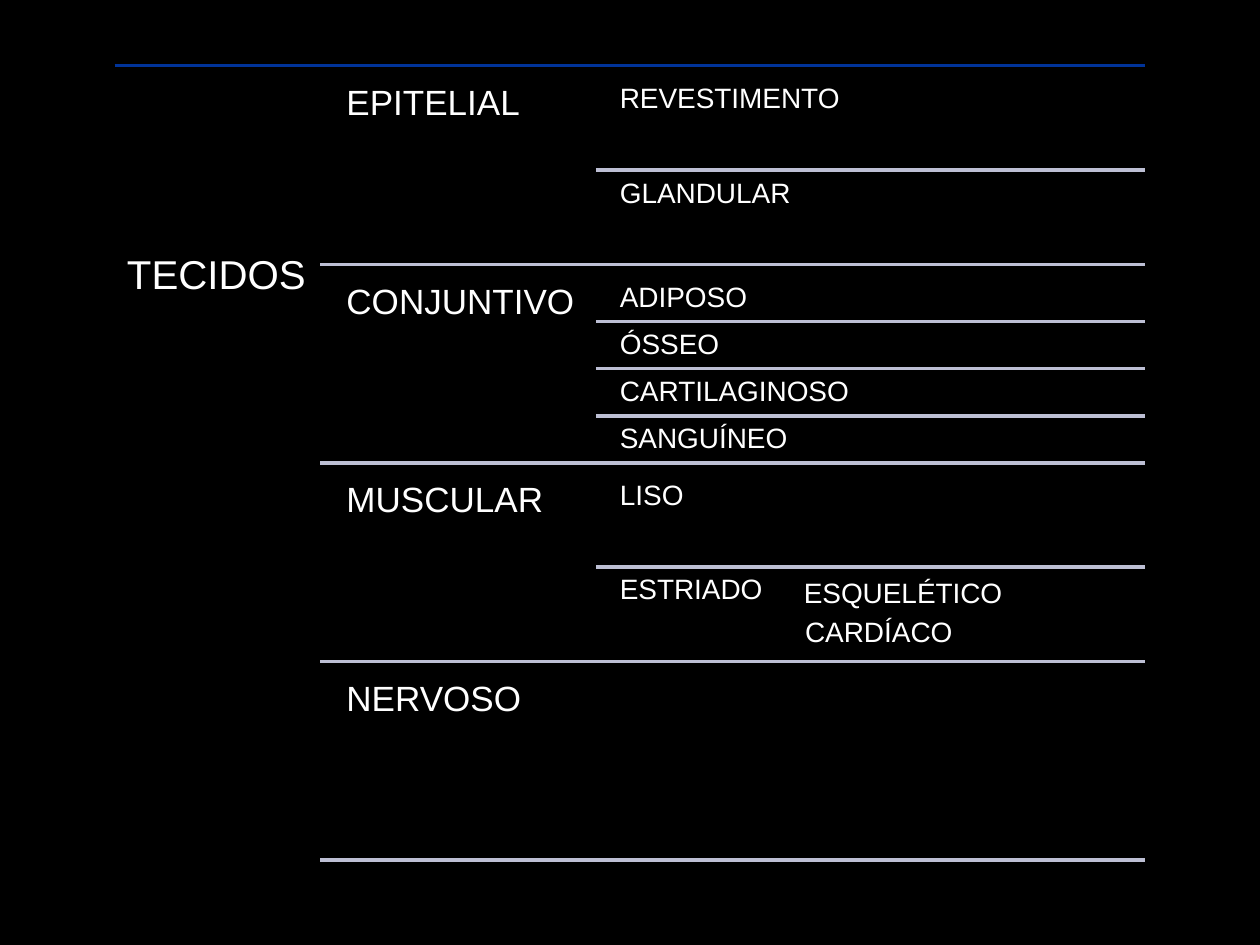
from dataclasses import dataclass

from pptx import Presentation
from pptx.dml.color import RGBColor
from pptx.enum.shapes import MSO_CONNECTOR as Connector
from pptx.enum.text import MSO_ANCHOR as Anchor, PP_ALIGN as Align
from pptx.oxml.xmlchemy import OxmlElement
from pptx.slide import Slide
from pptx.util import Inches, Pt


@dataclass(frozen=True)
class Theme:
    background: str = "000000"
    text: str = "FFFFFF"
    top_rule: str = "003399"
    rule: str = "BDBFD4"
    font: str = "Arial"
    root_size: int = 23
    tissue_size: int = 20
    subtype_size: int = 16
    rule_width: int = 2


@dataclass(frozen=True)
class Tissue:
    name: str
    subtypes: tuple[str, ...] = ()


THEME = Theme()

TISSUES = (
    Tissue("EPITELIAL", ("REVESTIMENTO", "GLANDULAR")),
    Tissue("CONJUNTIVO", ("ADIPOSO", "ÓSSEO", "CARTILAGINOSO", "SANGUÍNEO")),
    Tissue("MUSCULAR", ("LISO", "ESTRIADO")),
    Tissue("NERVOSO"),
)

# Layout in inches
LEFT, RIGHT, TOP = 0.91, 9.09, 0.52
TISSUE_RULE_LEFT, TISSUE_LEFT = 2.54, 2.67
SUBTYPE_RULE_LEFT, SUBTYPE_LEFT = 4.73, 4.85
COLUMN_WIDTH = 2.06
FIRST_TISSUE_TOP = 0.6
TISSUE_HEIGHT, TISSUE_GAP = 1.5, 0.075


def add_text(slide: Slide, text: str, *, left: float, top: float, width: float = COLUMN_WIDTH,
             height: float, size: int, inset: float) -> None:
    shape = slide.shapes.add_textbox(Inches(left), Inches(top), Inches(width), Inches(height))
    frame = shape.text_frame
    frame.word_wrap = True
    frame.vertical_anchor = Anchor.TOP
    frame.margin_left = frame.margin_right = Inches(inset)
    frame.margin_top = frame.margin_bottom = Inches(inset)
    paragraph = frame.paragraphs[0]
    paragraph.alignment = Align.LEFT
    paragraph.line_spacing = 0.9
    run = paragraph.add_run()
    run.text = text
    run.font.name = THEME.font
    run.font.size = Pt(size)
    run.font.color.rgb = RGBColor.from_string(THEME.text)


def add_rule(slide: Slide, left: float, y: float, color: str = THEME.rule) -> None:
    connector = slide.shapes.add_connector(
        Connector.STRAIGHT, Inches(left), Inches(y), Inches(RIGHT), Inches(y))
    connector.line.color.rgb = RGBColor.from_string(color)
    connector.line.width = Pt(THEME.rule_width)
    connector._element.spPr.append(OxmlElement("a:effectLst"))


def add_subtype(slide: Slide, text: str, left: float, top: float, height: float) -> None:
    add_text(slide, text, left=left, top=top, height=height,
             size=THEME.subtype_size, inset=0.07)


def add_tissue(slide: Slide, tissue: Tissue, top: float) -> None:
    add_text(slide, tissue.name, left=TISSUE_LEFT, top=top, height=TISSUE_HEIGHT,
             size=THEME.tissue_size, inset=0.08)
    # Subtypes share the height equally, with a rule between neighbours
    for index, subtype in enumerate(tissue.subtypes):
        height = TISSUE_HEIGHT / len(tissue.subtypes)
        subtype_top = top + index * height
        if index:
            add_rule(slide, SUBTYPE_RULE_LEFT, subtype_top)
        add_subtype(slide, subtype, SUBTYPE_LEFT, subtype_top, height)
    add_rule(slide, TISSUE_RULE_LEFT, top + TISSUE_HEIGHT)


def main() -> None:
    presentation = Presentation()
    presentation.slide_width, presentation.slide_height = Inches(10), Inches(7.5)
    slide = presentation.slides.add_slide(presentation.slide_layouts[6])
    fill = slide.background.fill
    fill.solid()
    fill.fore_color.rgb = RGBColor.from_string(THEME.background)

    # Root of the classification
    add_rule(slide, LEFT, TOP, THEME.top_rule)
    add_text(slide, "TECIDOS", left=LEFT, top=1.92, width=1.64, height=4.98,
             size=THEME.root_size, inset=0.1)

    # Tissues and their subtypes
    for index, tissue in enumerate(TISSUES):
        add_tissue(slide, tissue, FIRST_TISSUE_TOP + index * (TISSUE_HEIGHT + TISSUE_GAP))

    # Kinds of striated muscle
    add_subtype(slide, "ESQUELÉTICO", 6.31, 4.53, 0.37)
    add_subtype(slide, "CARDÍACO", 6.32, 4.84, 0.37)

    presentation.save("out.pptx")


if __name__ == "__main__":
    main()
